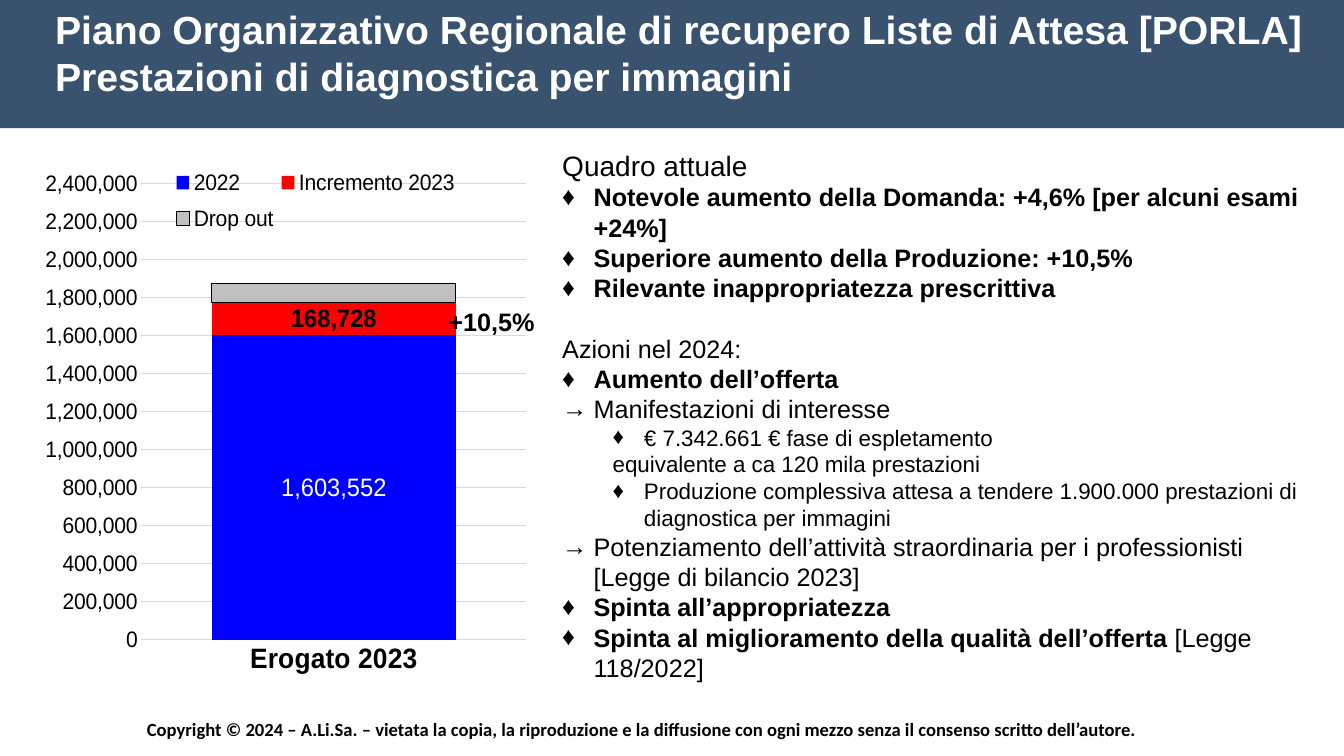
from lxml import etree
from pptx import Presentation
from pptx import util as u
from pptx.chart.data import CategoryChartData
from pptx.dml.color import RGBColor
from pptx.enum import chart as ch
from pptx.enum import shapes
from pptx.oxml import parse_xml
from pptx.oxml.ns import nsdecls, qn

NAVY = RGBColor(0x39, 0x52, 0x6D)
WHITE = RGBColor(0xFF, 0xFF, 0xFF)
BLACK = RGBColor(0, 0, 0)
BLUE = RGBColor(0, 0, 0xFF)
RED = RGBColor(0xFF, 0, 0)
GREY = RGBColor(0xBF, 0xBF, 0xBF)
GRID = RGBColor(0xD9, 0xD9, 0xD9)

HANG = 0.79
DIAMOND, ARROW = "♦", "→"
HEADING = dict()
POINT = dict(bullet=DIAMOND, margin=HANG, bold=True)
ACTION = dict(bullet=ARROW, margin=HANG)
DETAIL = dict(bullet=DIAMOND, margin=1.27 + HANG, level=1, size=16)
CONTINUATION = dict(margin=1.27, level=1, size=16)
BODY = [
    (["Quadro attuale"], dict(size=20)),
    (["Notevole aumento della Domanda: +4,6% [per alcuni esami +24%]"], POINT),
    (["Superiore aumento della Produzione: +10,5%"], POINT),
    (["Rilevante inappropriatezza prescrittiva"], POINT),
    (["Azioni nel 2024:"], dict(before=21.6)),
    (["Aumento dell’offerta"], POINT),
    (["Manifestazioni di interesse"], ACTION),
    (["€ 7.342.661 € fase di espletamento"], DETAIL),
    (["equivalente a ca 120 mila prestazioni"], CONTINUATION),
    (["Produzione complessiva attesa a tendere 1.900.000 prestazioni di "
      "diagnostica per immagini"], DETAIL),
    (["Potenziamento dell’attività straordinaria per i professionisti "
      "[Legge di bilancio 2023]"], ACTION),
    (["Spinta all’appropriatezza"], POINT),
    (["Spinta al miglioramento della qualità dell’offerta ",
      "[Legge 118/2022]"], POINT),
]


def set_font(font, size, color=BLACK, bold=False, name="Arial"):
    font.size = u.Pt(size)
    font.name = name
    font.bold = bold
    font.color.rgb = color


def add_text(p, runs, size=18, color=BLACK, bold=False, name="Arial",
             bullet=None, margin=0, level=0, before=0):
    p.level = level
    p.space_before = u.Pt(before)
    pPr = p._p.get_or_add_pPr()
    pPr.set("marL", str(u.Cm(margin)))
    pPr.set("indent", str(u.Cm(-HANG) if bullet else 0))
    if bullet:
        etree.SubElement(pPr, qn("a:buFont")).set("typeface", "Arial")
        etree.SubElement(pPr, qn("a:buChar")).set("char", bullet)
    else:
        etree.SubElement(pPr, qn("a:buNone"))
    for i, run in enumerate(runs):
        r = p.add_run()
        r.text = run
        set_font(r.font, size, color, bold and i == 0, name)


def add_box(s, box, paragraphs):
    tf = s.shapes.add_textbox(*map(u.Cm, box)).text_frame
    tf.word_wrap = True
    for i, (runs, fmt) in enumerate(paragraphs):
        p = tf.add_paragraph() if i else tf.paragraphs[0]
        add_text(p, runs, **fmt)


def add_header(s, x, y, w, h):
    sp = s.shapes.add_shape(shapes.MSO_SHAPE.RECTANGLE,
                            *map(u.Cm, (x, y, w, h)))
    sp.shadow.inherit = False
    sp.fill.solid()
    sp.fill.fore_color.rgb = NAVY
    sp.line.fill.background()
    title = ("Piano Organizzativo Regionale di recupero Liste di Attesa "
             "[PORLA] Prestazioni di diagnostica per immagini")
    add_box(s, (x + 1.14, y + 0.71, w - 1.59, 2.64),
            [([title], dict(size=28, color=WHITE, bold=True))])


def set_layout(parent, x, y, w, h, inner=False):
    for old in parent.findall(qn("c:layout")):
        parent.remove(old)
    target = '<c:layoutTarget val="inner"/>' if inner else ""
    sizes = "".join(f'<c:{k} val="{v}"/>'
                    for k, v in zip("xywh", (x, y, w, h)))
    return parse_xml(
        f'<c:layout {nsdecls("c")}><c:manualLayout>{target}'
        '<c:xMode val="edge"/><c:yMode val="edge"/>'
        f'{sizes}</c:manualLayout></c:layout>')


def add_stack_chart(s, x, y, w, h):
    data = CategoryChartData(number_format="#,##0")
    data.categories = ["Erogato 2023"]
    data.add_series("2022", [1603552])
    data.add_series("Incremento 2023", [168728])
    data.add_series("Drop out", [100000])
    chart = s.shapes.add_chart(ch.XL_CHART_TYPE.COLUMN_STACKED,
                               *map(u.Cm, (x, y, w, h)), data).chart
    chart.has_title = False
    set_font(chart.font, 18)

    plot = chart.plots[0]
    plot.gap_width, plot.overlap = 58, 100
    plot.vary_by_categories = False
    for ser, color in zip(plot.series, (BLUE, RED, GREY)):
        ser.format.fill.solid()
        ser.format.fill.fore_color.rgb = color
    ser.format.line.color.rgb = BLACK
    ser.format.line.width = u.Pt(0.75)
    for ser, color, bold in zip(plot.series, (WHITE, BLACK), (False, True)):
        labels = ser.data_labels
        labels.show_value = True
        labels.number_format = "#,##0"
        labels.number_format_is_linked = False
        set_font(labels.font, 18, color, bold)

    cat, val = chart.category_axis, chart.value_axis
    for axis in (cat, val):
        axis.major_tick_mark = ch.XL_TICK_MARK.NONE
        axis.minor_tick_mark = ch.XL_TICK_MARK.NONE
    set_font(cat.tick_labels.font, 20, bold=True)
    set_font(val.tick_labels.font, 16)
    val.minimum_scale, val.maximum_scale = 0, 2500000
    val.major_unit = 200000
    val.tick_labels.number_format = "#,##0"
    val.tick_labels.number_format_is_linked = False
    val.format.line.fill.background()
    for line in (cat.format.line, val.major_gridlines.format.line):
        line.color.rgb = GRID
        line.width = u.Pt(0.75)

    chart.has_legend = True
    legend = chart.legend
    legend.position = ch.XL_LEGEND_POSITION.BOTTOM
    legend.include_in_layout = False
    set_font(legend.font, 16)
    legend_el = legend._element
    layout = set_layout(legend_el, 0.21, 0.02, 0.65, 0.15)
    legend_el.find(qn("c:legendPos")).addnext(layout)
    area = chart._chartSpace.chart.plotArea
    area.insert(0, set_layout(area, 0.19, 0.03, 0.85, 0.86, inner=True))
    add_box(s, (x + 9.91, y + 3.86, 3.63, 1.02),
            [(["+10,5%"], dict(bold=True))])


def add_footer(s, *box):
    notice = ("Copyright © 2024 – A.Li.Sa. – vietata la copia, la riproduzione "
              "e la diffusione con ogni mezzo senza il consenso scritto "
              "dell’autore.")
    add_box(s, box, [([notice], dict(size=13.3, bold=True, name="Calibri"))])


def main():
    prs = Presentation()
    prs.slide_width, prs.slide_height = u.Cm(33.87), u.Cm(19.05)
    s = prs.slides.add_slide(prs.slide_layouts[6])
    add_header(s, 0, -0.71, 33.87, 3.94)
    add_footer(s, 3.45, 17.96, 27.05, 0.84)
    add_stack_chart(s, 1.14, 3.73, 12.14, 13.92)
    add_box(s, (13.92, 3.61, 19.74, 13.84), BODY)
    prs.save("out.pptx")


if __name__ == "__main__":
    main()
